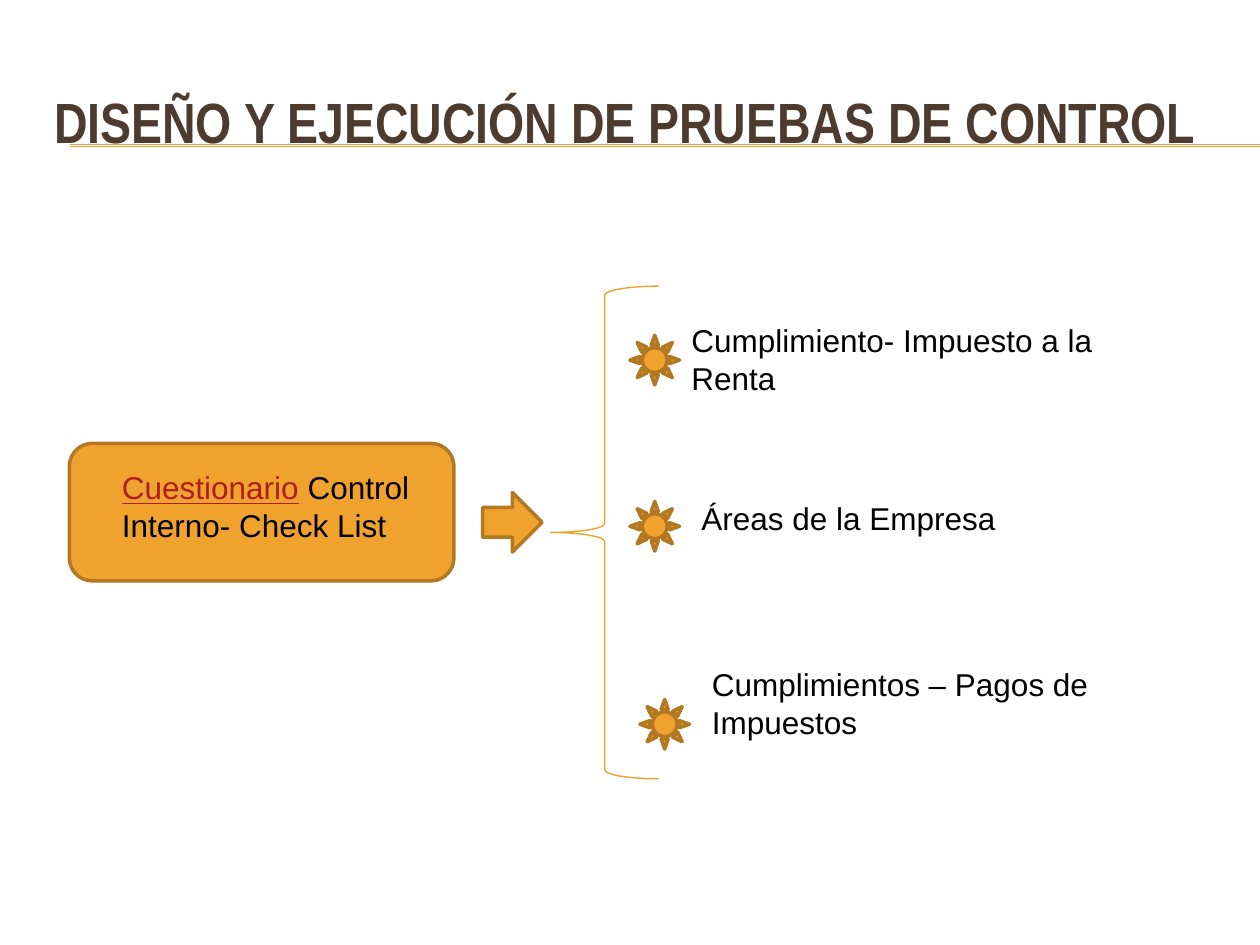
from lxml.etree import SubElement
from pptx import Presentation
from pptx.dml.color import RGBColor
from pptx.enum.shapes import MSO_CONNECTOR, MSO_SHAPE
from pptx.enum.text import MSO_ANCHOR, PP_ALIGN
from pptx.oxml.ns import qn
from pptx.util import Cm, Pt

COLORS = {
    "title": "4E3B30",
    "accent": "F0A22E",
    "outline": "B27822",
    "emphasis": "AD1F1F",
    "text": "000000",
}


def rgb(name):
    return RGBColor.from_string(COLORS[name])


def add_text(slide, box, runs, size=18, font="Arial", bold=False, anchor=MSO_ANCHOR.TOP):
    shape = slide.shapes.add_textbox(*map(Cm, box))
    text_frame = shape.text_frame
    text_frame.word_wrap = True
    text_frame.vertical_anchor = anchor
    paragraph = text_frame.paragraphs[0]
    paragraph.alignment = PP_ALIGN.LEFT
    for text, color, underline in runs:
        run = paragraph.add_run()
        run.text = text
        run.font.name = font
        run.font.size = Pt(size)
        run.font.bold = bold
        run.font.underline = underline
        run.font.color.rgb = rgb(color)


def add_filled_shape(slide, kind, box):
    shape = slide.shapes.add_shape(kind, *map(Cm, box))
    shape.shadow.inherit = False
    shape.fill.solid()
    shape.fill.fore_color.rgb = rgb("accent")
    shape.line.color.rgb = rgb("outline")
    shape.line.width = Pt(2)


def add_title(slide, box):
    left, top, width, height = box
    for offset in (1.65, 1.68):
        rule = slide.shapes.add_connector(
            MSO_CONNECTOR.STRAIGHT, Cm(left + 0.58), Cm(top + offset), Cm(25.4), Cm(top + offset)
        )
        rule.line.color.rgb = rgb("accent")
        rule.line.width = Pt(0.75)
        SubElement(rule._element.spPr, qn("a:effectLst"))
    add_text(
        slide, box, [("DISEÑO Y EJECUCIÓN DE PRUEBAS DE CONTROL", "title", False)],
        size=32.4, font="Arial Narrow", bold=True, anchor=MSO_ANCHOR.MIDDLE,
    )


def add_questionnaire(slide, box):
    left, top, width, height = box
    add_filled_shape(slide, MSO_SHAPE.ROUNDED_RECTANGLE, box)
    add_text(
        slide, (left + 0.81, top + 0.38, 6.35, 1.8),
        [("Cuestionario", "emphasis", True), (" Control Interno- Check List", "text", False)],
    )


def add_control_areas(slide, box):
    left, top, width, height = box
    brace = slide.shapes.add_shape(MSO_SHAPE.LEFT_BRACE, *map(Cm, box))
    brace.shadow.inherit = False
    brace.fill.background()
    brace.line.color.rgb = rgb("accent")
    brace.line.width = Pt(0.79)

    areas = [
        ("Cumplimiento- Impuesto a la Renta", 2.59, 0.58, 1.8, 1.6, 0.99),
        ("Áreas de la Empresa", 2.79, 4.16, 1.02, 1.6, 4.34),
        ("Cumplimientos – Pagos de Impuestos", 3, 7.51, 1.8, 1.8, 8.33),
    ]
    for text, text_left, text_top, text_height, sun_left, sun_top in areas:
        add_filled_shape(slide, MSO_SHAPE.SUN, (left + sun_left, top + sun_top, 1, 1))
        add_text(
            slide, (left + text_left, top + text_top, 10.11, text_height),
            [(text, "text", False)],
        )


def main():
    presentation = Presentation()
    presentation.slide_width = Cm(25.4)
    presentation.slide_height = Cm(19.05)
    slide = presentation.slides.add_slide(presentation.slide_layouts[6])
    add_title(slide, (0.84, 1.27, 24.13, 2.34))
    add_questionnaire(slide, (1.4, 8.94, 7.75, 2.77))
    add_filled_shape(slide, MSO_SHAPE.RIGHT_ARROW, (9.73, 9.93, 1.2, 1.2))
    add_control_areas(slide, (11.1, 5.77, 2.18, 9.93))
    presentation.save("out.pptx")


if __name__ == "__main__":
    main()
